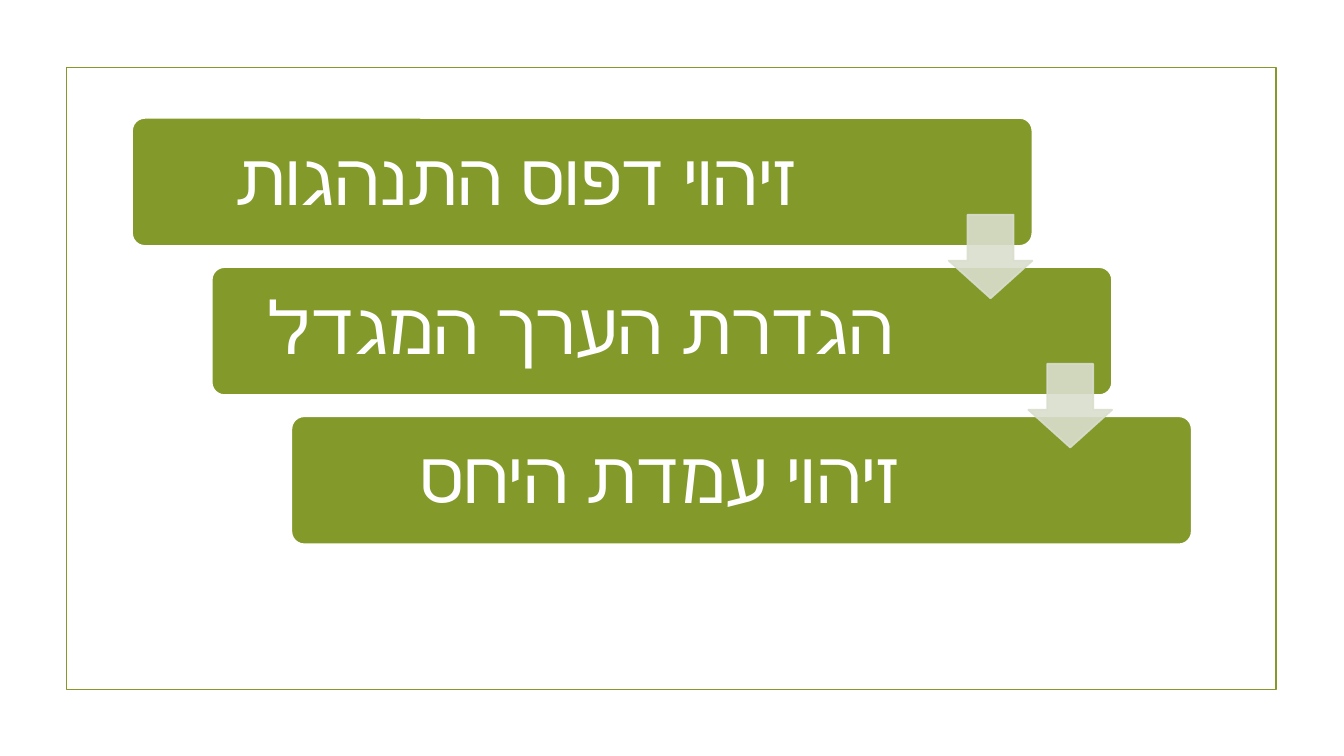
import dataclasses

import lxml.etree
import pptx
import pptx.dml.color
import pptx.enum.shapes
import pptx.enum.text
import pptx.oxml.ns
import pptx.shapes.autoshape
import pptx.slide
import pptx.util

Inches = pptx.util.Inches
Pt = pptx.util.Pt
Shapes = pptx.enum.shapes.MSO_SHAPE

GREEN = pptx.dml.color.RGBColor(0x83, 0x99, 0x2A)
PALE_GREEN = pptx.dml.color.RGBColor(0xD9, 0xDE, 0xCD)
WHITE = pptx.dml.color.RGBColor(0xFF, 0xFF, 0xFF)

STEP_X = 0.79
STEP_Y = 1.48
BAR_LEFT, BAR_TOP, BAR_WIDTH, BAR_HEIGHT = 1.31, 1.17, 8.93, 1.27
ARROW_LEFT, ARROW_TOP, ARROW_SIZE = 9.41, 2.13, 0.83
LABEL_INSET = 0.04
LABEL_MARGIN = 0.22
ARROW_OPACITY = 90


@dataclasses.dataclass(frozen=True)
class Step:
    text: str
    label_width: float


STEPS = [
    Step("זיהוי דפוס התנהגות", 7.55),
    Step("הגדרת הערך המגדל", 7.24),
    Step("זיהוי עמדת היחס", 7.24),
]


def add_outlined_shape(
    slide: pptx.slide.Slide,
    kind: Shapes,
    left: float,
    top: float,
    width: float,
    height: float,
    line_color: pptx.dml.color.RGBColor,
    fill_color: pptx.dml.color.RGBColor | None = None,
    adjustments: tuple[float, ...] = (),
) -> pptx.shapes.autoshape.Shape:
    shape = slide.shapes.add_shape(
        kind, Inches(left), Inches(top), Inches(width), Inches(height)
    )
    shape.shadow.inherit = False
    for index, value in enumerate(adjustments):
        shape.adjustments[index] = value
    if fill_color is None:
        shape.fill.background()
    else:
        shape.fill.solid()
        shape.fill.fore_color.rgb = fill_color
    shape.line.color.rgb = line_color
    shape.line.width = Pt(1.25)
    return shape


def set_opacity(shape: pptx.shapes.autoshape.Shape, percent: int) -> None:
    tag = pptx.oxml.ns.qn("a:srgbClr")
    for color in shape.element.spPr.iter(tag):
        alpha = lxml.etree.SubElement(color, pptx.oxml.ns.qn("a:alpha"))
        alpha.set("val", str(percent * 1000))


def add_label(slide: pptx.slide.Slide, step: Step, left: float, top: float) -> None:
    label = slide.shapes.add_textbox(
        Inches(left),
        Inches(top),
        Inches(step.label_width),
        Inches(BAR_HEIGHT - 2 * LABEL_INSET),
    )
    frame = label.text_frame
    frame.word_wrap = True
    frame.vertical_anchor = pptx.enum.text.MSO_ANCHOR.MIDDLE
    frame.margin_left = frame.margin_right = Inches(LABEL_MARGIN)
    frame.margin_top = frame.margin_bottom = Inches(LABEL_MARGIN)
    paragraph = frame.paragraphs[0]
    paragraph.text = step.text
    paragraph.alignment = pptx.enum.text.PP_ALIGN.CENTER
    paragraph.line_spacing = 0.9
    paragraph._p.get_or_add_pPr().set("rtl", "1")
    paragraph.font.name = "Times New Roman"
    paragraph.font.size = Pt(52)
    paragraph.font.color.rgb = WHITE


def add_step(slide: pptx.slide.Slide, index: int, step: Step) -> None:
    left = BAR_LEFT + index * STEP_X
    top = BAR_TOP + index * STEP_Y
    add_outlined_shape(
        slide, Shapes.ROUNDED_RECTANGLE, left, top, BAR_WIDTH, BAR_HEIGHT,
        WHITE, GREEN, (0.1,),
    )
    add_label(slide, step, left + LABEL_INSET, top + LABEL_INSET)


def add_arrow(slide: pptx.slide.Slide, index: int) -> None:
    arrow = add_outlined_shape(
        slide,
        Shapes.DOWN_ARROW,
        ARROW_LEFT + index * STEP_X,
        ARROW_TOP + index * STEP_Y,
        ARROW_SIZE,
        ARROW_SIZE,
        PALE_GREEN,
        PALE_GREEN,
        (0.55, 0.45),
    )
    set_opacity(arrow, ARROW_OPACITY)


def main() -> None:
    presentation = pptx.Presentation()
    presentation.slide_width = Inches(13.33)
    presentation.slide_height = Inches(7.5)
    slide = presentation.slides.add_slide(presentation.slide_layouts[6])
    add_outlined_shape(slide, Shapes.RECTANGLE, 0.66, 0.67, 12, 6.17, GREEN)
    for index, step in enumerate(STEPS):
        add_step(slide, index, step)
    for index in range(len(STEPS) - 1):
        add_arrow(slide, index)
    presentation.save("out.pptx")


if __name__ == "__main__":
    main()
